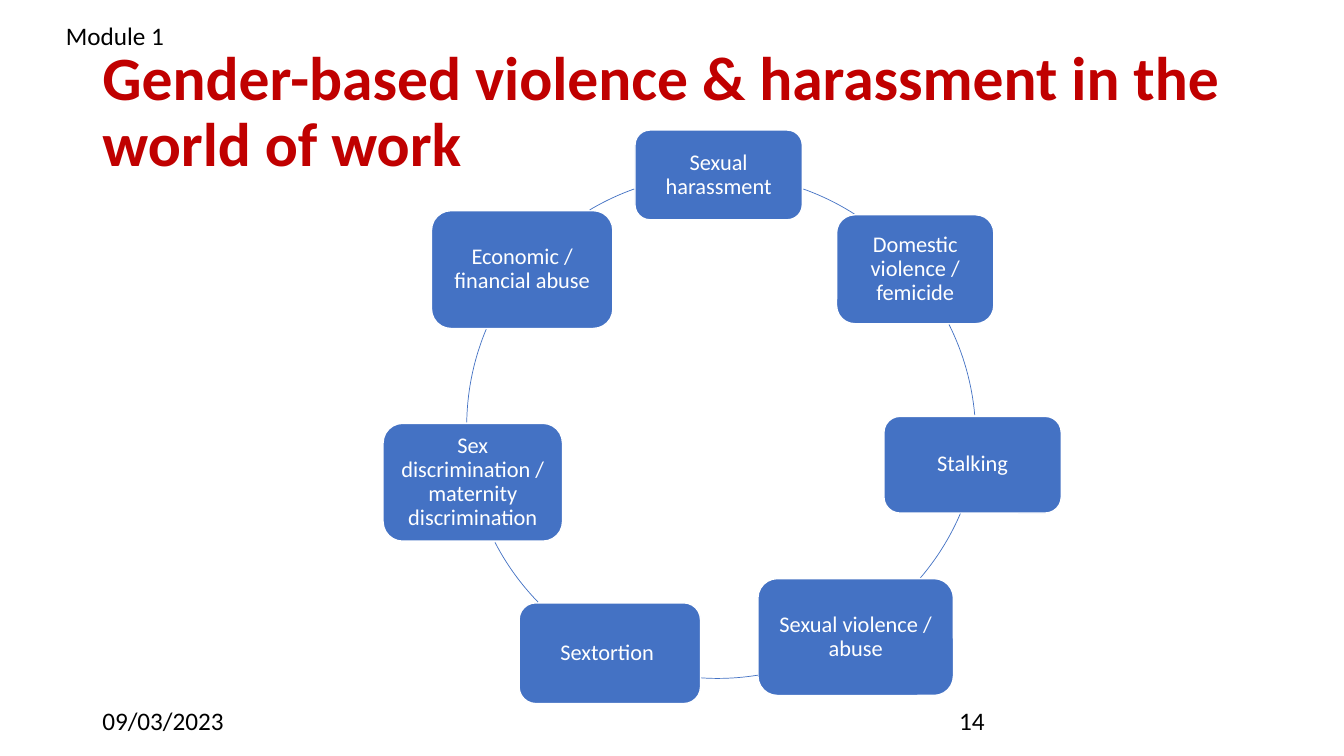
"""Build the slide on forms of violence and harassment in the world of work."""
from lxml import etree
from pptx import Presentation
from pptx.dml.color import RGBColor
from pptx.enum.shapes import MSO_SHAPE
from pptx.enum.text import MSO_ANCHOR, MSO_AUTO_SIZE, PP_ALIGN
from pptx.util import Pt

ROUNDED, ARC = MSO_SHAPE.ROUNDED_RECTANGLE, MSO_SHAPE.ARC
TOP, MIDDLE = MSO_ANCHOR.TOP, MSO_ANCHOR.MIDDLE
LEFT, CENTER = PP_ALIGN.LEFT, PP_ALIGN.CENTER
NO_FIT, GROW = MSO_AUTO_SIZE.NONE, MSO_AUTO_SIZE.SHAPE_TO_FIT_TEXT

RED = RGBColor(0xC0, 0x00, 0x00)
BLUE = RGBColor(0x44, 0x72, 0xC4)
WHITE = RGBColor(0xFF, 0xFF, 0xFF)
BLACK = RGBColor(0x00, 0x00, 0x00)

RING_SIZE = 360
DEGREE = 0.6

FORMS = [
    ("Sexual harassment", (453.6, 92.9, 119.5, 64.1)),
    ("Domestic violence / femicide", (597.6, 153.4, 112.3, 77.8)),
    ("Stalking", (631.4, 297.4, 126.7, 69.1)),
    ("Sexual violence / abuse", (541.4, 413.3, 139.7, 83.5)),
    ("Sextortion ", (370.8, 430.6, 129.6, 72)),
    ("Sex discrimination / maternity discrimination", (273.6, 302.4, 128.2, 84.2)),
    ("Economic / financial abuse", (308.2, 150.5, 129.6, 84.2)),
]
RING_ARCS = [
    (333.4, 124.6, 289.6, 302.6),
    (337, 132.5, 333.4, 354.9),
    (340.6, 115.9, 23.2, 40.6),
    (332.6, 124.6, 80.8, 93.9),
    (333.4, 124.6, 135.8, 152.6),
    (333.4, 124.6, 180.9, 202.9),
    (333.4, 124.6, 239.2, 250.4),
]


def write(frame, text, size=18, color=BLACK, bold=False, align=LEFT,
          anchor=TOP, spacing=1.0, inset=None, wrap=True, fit=NO_FIT):
    """Put formatted text into a text frame."""
    frame.word_wrap = wrap
    frame.auto_size = fit
    frame.vertical_anchor = anchor
    if inset is not None:
        frame.margin_left = frame.margin_right = Pt(inset)
        frame.margin_top = frame.margin_bottom = Pt(inset)
    paragraph = frame.paragraphs[0]
    paragraph.alignment = align
    paragraph.line_spacing = spacing
    run = paragraph.add_run()
    run.text = text
    run.font.name = "Calibri"
    run.font.size = Pt(size)
    run.font.bold = bold
    run.font.color.rgb = color


class CycleSlide:
    """Hold the current slide and the style of its elements."""

    def __init__(self, slide):
        self.slide = slide
        self.accent = BLUE

    def title(self, text, box):
        """Fill and place the title placeholder."""
        heading = self.slide.shapes.title
        heading.left, heading.top, heading.width, heading.height = map(Pt, box)
        write(heading.text_frame, text, size=44, color=RED, bold=True,
              anchor=MIDDLE, spacing=0.9)

    def label(self, text, box, **style):
        """Add a plain text label."""
        write(self.slide.shapes.add_textbox(*map(Pt, box)).text_frame, text, **style)

    def form(self, text, box):
        """Add one rounded box of the cycle."""
        node = self.slide.shapes.add_shape(ROUNDED, *map(Pt, box))
        node.shadow.inherit = False
        node.fill.solid()
        node.fill.fore_color.rgb = self.accent
        node.line.color.rgb = WHITE
        node.line.width = Pt(1)
        write(node.text_frame, text, size=16, color=WHITE, align=CENTER,
              anchor=MIDDLE, spacing=0.9, inset=5)

    def ring_arc(self, left, top, start, end):
        """Add the part of the ring between two angles in degrees."""
        arc = self.slide.shapes.add_shape(
            ARC, Pt(left), Pt(top), Pt(RING_SIZE), Pt(RING_SIZE))
        arc.adjustments[0] = start * DEGREE
        arc.adjustments[1] = end * DEGREE
        arc.shadow.inherit = False
        arc.fill.background()
        arc.line.color.rgb = self.accent
        arc.line.width = Pt(0.5)


def main():
    """Build and save the presentation."""
    deck = Presentation()
    deck.slide_width, deck.slide_height = Pt(960), Pt(540)
    cycle = CycleSlide(deck.slides.add_slide(deck.slide_layouts[5]))
    cycle.title("Gender-based violence & harassment in the world of work",
                (66, 28.8, 828, 104.4))
    for (text, box), arc in zip(FORMS, RING_ARCS):
        cycle.form(text, box)
        cycle.ring_arc(*arc)
    cycle.label("09/03/2023", (66, 500.5, 216, 28.8))
    cycle.label("14", (678, 500.5, 216, 28.8))
    cycle.label("Module 1", (39.9, 11, 85.7, 29.1), wrap=False, fit=GROW)
    deck.save("out.pptx")


if __name__ == "__main__":
    main()
